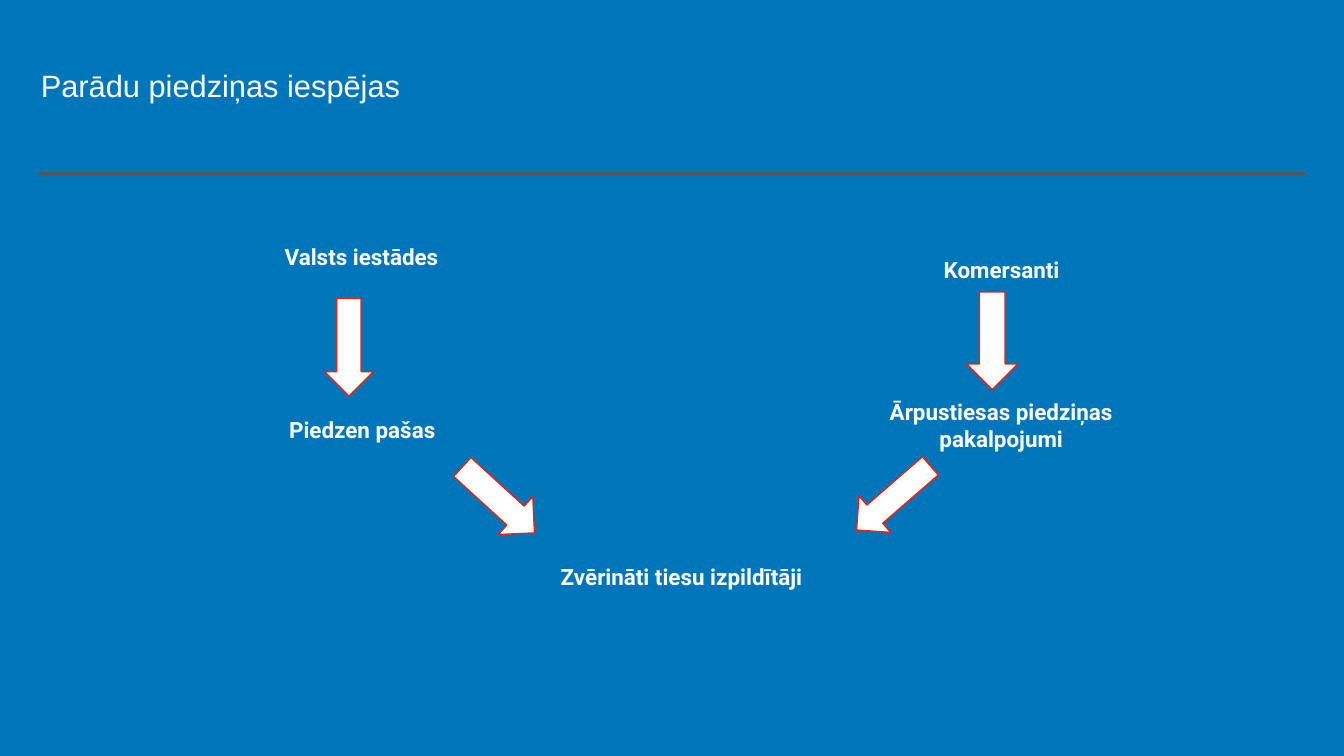
from pptx import Presentation
from pptx.dml.color import RGBColor
from pptx.enum.shapes import MSO_CONNECTOR as CONNECTOR, MSO_SHAPE as SHAPE
from pptx.enum.text import MSO_ANCHOR as ANCHOR, PP_ALIGN as ALIGN
from pptx.oxml.ns import qn
from pptx.util import Inches, Pt
from lxml import etree

COLORS = {"background": "0076BA", "white": "FFFFFF", "rule": "53585F", "arrow_edge": "EE220C"}

# text, left, top, width, height
STEPS = [
    ("Valsts iestādes", 3.4, 4.77, 7.55, 0.65),
    ("Komersanti", 15.72, 5.02, 8.31, 0.65),
    ("Piedzen pašas", 4.76, 8.2, 4.86, 0.65),
    ("Ārpustiesas piedziņas pakalpojumi", 16.92, 7.83, 5.9, 1.19),
    ("Zvērināti tiesu izpildītāji", 10.37, 11.12, 6.31, 0.65),
]
# left, top, width, rotation
ARROWS = [
    (6.44, 5.92, 0.97, 0),
    (19.18, 5.79, 1.02, 0),
    (9.38, 8.95, 1.02, 312.4),
    (17.25, 8.91, 0.96, 49),
]
ARROW_LENGTH = 1.94


def color(name):
    return RGBColor.from_string(COLORS[name])


def add_label(slide, text, box, size, font, bold=False, align=ALIGN.LEFT):
    frame = slide.shapes.add_textbox(*map(Inches, box)).text_frame
    frame.word_wrap = True
    frame.vertical_anchor = ANCHOR.MIDDLE
    frame.margin_left = frame.margin_right = Inches(0.06)
    frame.margin_top = frame.margin_bottom = Inches(0.06)
    paragraph = frame.paragraphs[0]
    paragraph.alignment = align
    run = paragraph.add_run()
    run.text = text
    run.font.name = font
    run.font.size = Pt(size)
    run.font.bold = bold
    run.font.color.rgb = color("white")


def add_header(slide, left, top, width, height):
    """Place the title with a rule along the bottom of the box."""
    add_label(slide, "Parādu piedziņas iespējas", (left, top, 15.7, 0.85), 44, "Arial")
    bottom = Inches(top + height)
    rule = slide.shapes.add_connector(
        CONNECTOR.STRAIGHT, Inches(left + width), bottom, Inches(left), bottom)
    rule.line.color.rgb = color("rule")
    rule.line.width = Pt(4)
    etree.SubElement(rule._element.spPr, qn("a:effectLst"))


def add_arrow(slide, left, top, width, rotation):
    arrow = slide.shapes.add_shape(
        SHAPE.DOWN_ARROW, *map(Inches, (left, top, width, ARROW_LENGTH)))
    arrow.rotation = rotation
    arrow.shadow.inherit = False
    arrow.fill.solid()
    arrow.fill.fore_color.rgb = color("white")
    arrow.line.color.rgb = color("arrow_edge")
    arrow.line.width = Pt(2)


def add_recovery_flow(slide, left, top):
    """Place the steps and arrows, offset from the given corner."""
    for text, x, y, width, height in STEPS:
        add_label(slide, text, (left + x, top + y, width, height), 32, "Roboto",
                  bold=True, align=ALIGN.CENTER)
    for x, y, width, rotation in ARROWS:
        add_arrow(slide, left + x, top + y, width, rotation)


def main():
    deck = Presentation()
    deck.slide_width, deck.slide_height = Inches(26.67), Inches(15)
    slide = deck.slides.add_slide(deck.slide_layouts[6])
    slide.background.fill.solid()
    slide.background.fill.fore_color.rgb = color("background")
    add_header(slide, 0.75, 1.27, 25.16, 2.18)
    add_recovery_flow(slide, 0, 0)
    deck.save("out.pptx")


if __name__ == "__main__":
    main()
